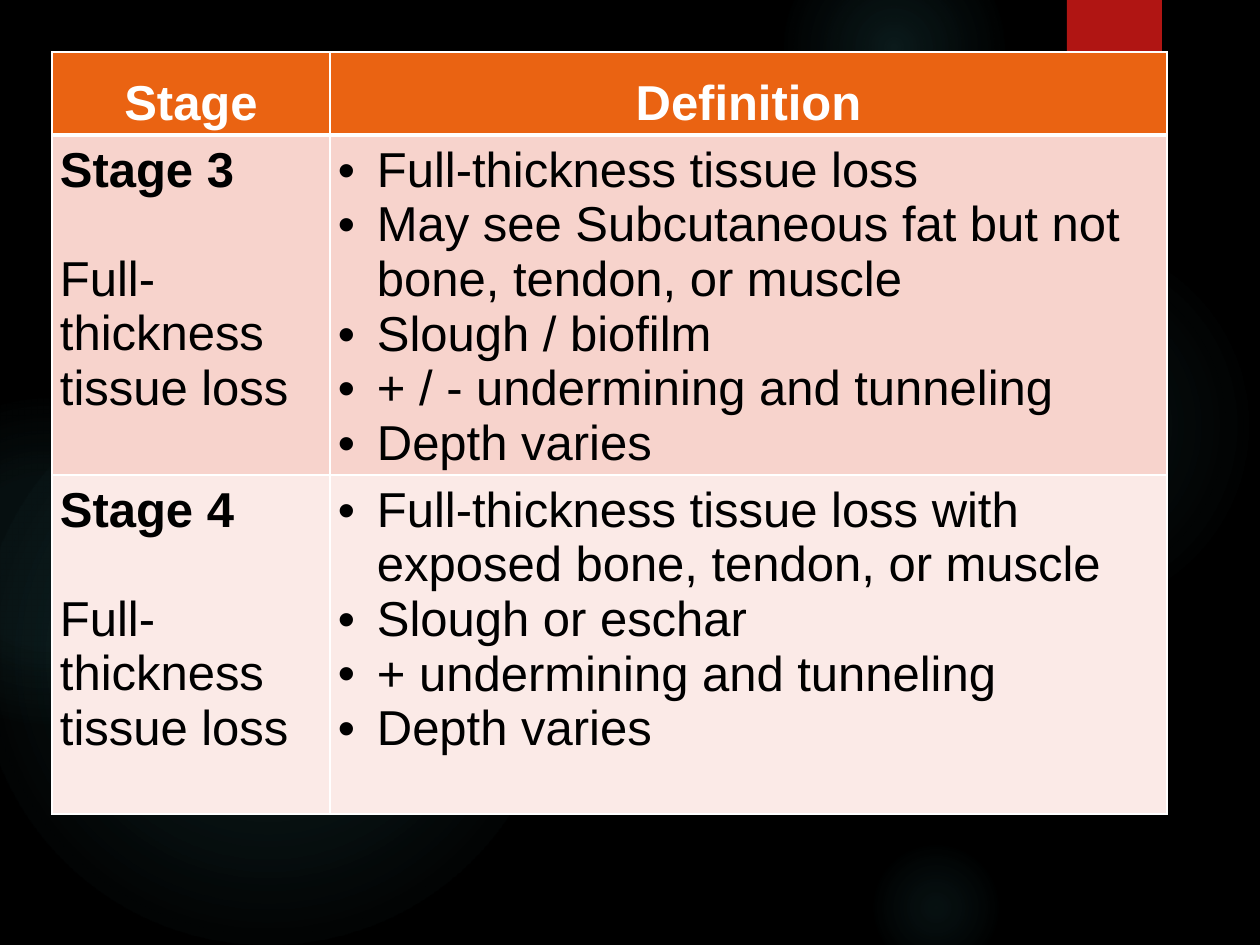
from dataclasses import dataclass

from lxml import etree
from pptx import Presentation
from pptx.dml.color import RGBColor
from pptx.enum.shapes import MSO_SHAPE
from pptx.enum.text import MSO_ANCHOR, PP_ALIGN
from pptx.oxml import parse_xml
from pptx.oxml.ns import nsdecls, qn
from pptx.util import Emu, Pt

OVAL = MSO_SHAPE.OVAL
RECTANGLE = MSO_SHAPE.RECTANGLE
TOP, BOTTOM = MSO_ANCHOR.TOP, MSO_ANCHOR.BOTTOM
LEFT, CENTER = PP_ALIGN.LEFT, PP_ALIGN.CENTER
EMU_PER_PX = 914400 / 126


@dataclass(frozen=True)
class Theme:
    background: str = "000000"
    glow: str = "50B9C1"
    accent: str = "B01513"
    header: str = "EA6312"
    bands: tuple = ("F7D3CC", "FBEAE7")
    light: str = "FFFFFF"
    dark: str = "000000"
    font: str = "Arial"
    text_size: int = 28
    stage_gap: int = 31
    border: int = 1
    header_border: int = 3


THEME = Theme()

GLOWS = [
    (868, 231, 388, ((0, 7), (36, 6), (69, 0))),
    (784, -63, 220, ((0, 14), (36, 7), (73, 0))),
    (868, 840, 136, ((0, 9), (36, 5), (66, 0))),
    (-21, 368, 577, ((0, 11), (36, 10), (75, 0))),
    (-116, 399, 325, ((0, 8), (36, 8), (72, 0))),
]

HEADERS = ["Stage", "Definition"]
STAGES = [
    ("Stage 3", "Full-thickness tissue loss", [
        "Full-thickness tissue loss",
        "May see Subcutaneous fat but not bone, tendon, or muscle",
        "Slough / biofilm",
        "+ / - undermining and tunneling",
        "Depth varies",
    ]),
    ("Stage 4", "Full-thickness tissue loss", [
        "Full-thickness tissue loss with exposed bone, tendon, or muscle",
        "Slough or eschar",
        "+ undermining and tunneling",
        "Depth varies",
    ]),
]
COLUMN_WIDTHS = [278, 837]
ROW_HEIGHTS = [83, 340, 339]


def px(length):
    return Emu(round(length * EMU_PER_PX))


def rgb(color):
    return RGBColor.from_string(color)


def add_plain_shape(slide, kind, left, top, width, height):
    shape = slide.shapes.add_shape(kind, px(left), px(top), px(width), px(height))
    shape.shadow.inherit = False
    shape.line.fill.background()
    return shape


def add_glow(slide, left, top, size, stops):
    shape = add_plain_shape(slide, OVAL, left, top, size, size)
    shape.fill.background()
    stop_xml = "".join(
        f'<a:gs pos="{position * 1000}"><a:srgbClr val="{THEME.glow}">'
        f'<a:alpha val="{alpha * 1000}"/></a:srgbClr></a:gs>'
        for position, alpha in stops
    )
    gradient = parse_xml(
        f'<a:gradFill {nsdecls("a")} rotWithShape="1"><a:gsLst>{stop_xml}</a:gsLst>'
        '<a:path path="circle"><a:fillToRect l="50000" t="50000" r="50000" b="50000"/>'
        "</a:path></a:gradFill>"
    )
    properties = shape.element.spPr
    properties.replace(properties.find(qn("a:noFill")), gradient)


def add_accent(slide):
    shape = add_plain_shape(slide, RECTANGLE, 1067, 0, 95, 151)
    shape.fill.solid()
    shape.fill.fore_color.rgb = rgb(THEME.accent)
    effects = shape.element.spPr.find(qn("a:effectLst"))
    effects.append(parse_xml(
        f'<a:outerShdw {nsdecls("a")} blurRad="{Pt(3)}" dist="{Pt(2)}" dir="5400000">'
        f'<a:srgbClr val="{THEME.dark}"><a:alpha val="45000"/></a:srgbClr></a:outerShdw>'
    ))


def write_text(paragraph, text, color=THEME.dark, bold=False, align=LEFT,
               bullet=False, gap_after=0):
    paragraph.alignment = align
    paragraph.space_after = Pt(gap_after)
    run = paragraph.add_run()
    run.text = text
    run.font.name = THEME.font
    run.font.size = Pt(THEME.text_size)
    run.font.bold = bold
    run.font.color.rgb = rgb(color)
    if bullet:
        properties = paragraph._p.get_or_add_pPr()
        properties.set("marL", str(px(39)))
        properties.set("indent", str(-px(39)))
        etree.SubElement(properties, qn("a:buFont"), typeface=THEME.font)
        etree.SubElement(properties, qn("a:buChar"), char="•")


def format_cell(cell, fill, anchor=TOP, top_border=THEME.border,
                bottom_border=THEME.border):
    cell.vertical_anchor = anchor
    cell.margin_left = cell.margin_right = cell.margin_top = px(8)
    cell.margin_bottom = px(4)
    cell.fill.solid()
    cell.fill.fore_color.rgb = rgb(fill)
    borders = [("lnL", THEME.border), ("lnR", THEME.border),
               ("lnT", top_border), ("lnB", bottom_border)]
    properties = cell._tc.get_or_add_tcPr()
    for index, (side, width) in enumerate(borders):
        properties.insert(index, parse_xml(
            f'<a:{side} {nsdecls("a")} w="{Pt(width)}"><a:solidFill>'
            f'<a:srgbClr val="{THEME.light}"/></a:solidFill></a:{side}>'
        ))


def fill_header(table):
    for column, title in enumerate(HEADERS):
        cell = table.cell(0, column)
        format_cell(cell, THEME.header, anchor=BOTTOM,
                    bottom_border=THEME.header_border)
        write_text(cell.text_frame.paragraphs[0], title, color=THEME.light,
                   bold=True, align=CENTER)


def fill_stage(table, row, stage, summary, findings):
    stage_cell, definition_cell = table.cell(row, 0), table.cell(row, 1)
    for cell in (stage_cell, definition_cell):
        format_cell(cell, THEME.bands[row - 1],
                    top_border=THEME.header_border if row == 1 else THEME.border)
    stage_frame = stage_cell.text_frame
    write_text(stage_frame.paragraphs[0], stage, bold=True, gap_after=THEME.stage_gap)
    write_text(stage_frame.add_paragraph(), summary)
    definition_frame = definition_cell.text_frame
    for index, finding in enumerate(findings):
        paragraph = (definition_frame.add_paragraph() if index
                     else definition_frame.paragraphs[0])
        write_text(paragraph, finding, bullet=True)


def add_stage_table(slide):
    table = slide.shapes.add_table(
        len(ROW_HEIGHTS), len(COLUMN_WIDTHS), px(52), px(52),
        px(sum(COLUMN_WIDTHS)), px(sum(ROW_HEIGHTS))).table
    table.horz_banding = False
    for column, width in zip(table.columns, COLUMN_WIDTHS):
        column.width = px(width)
    for row, height in zip(table.rows, ROW_HEIGHTS):
        row.height = px(height)
    fill_header(table)
    for row, (stage, summary, findings) in enumerate(STAGES, start=1):
        fill_stage(table, row, stage, summary, findings)


def main():
    presentation = Presentation()
    presentation.slide_width, presentation.slide_height = px(1260), px(945)
    slide = presentation.slides.add_slide(presentation.slide_layouts[6])
    slide.background.fill.solid()
    slide.background.fill.fore_color.rgb = rgb(THEME.background)
    for glow in GLOWS:
        add_glow(slide, *glow)
    add_accent(slide)
    add_stage_table(slide)
    presentation.save("out.pptx")


if __name__ == "__main__":
    main()
